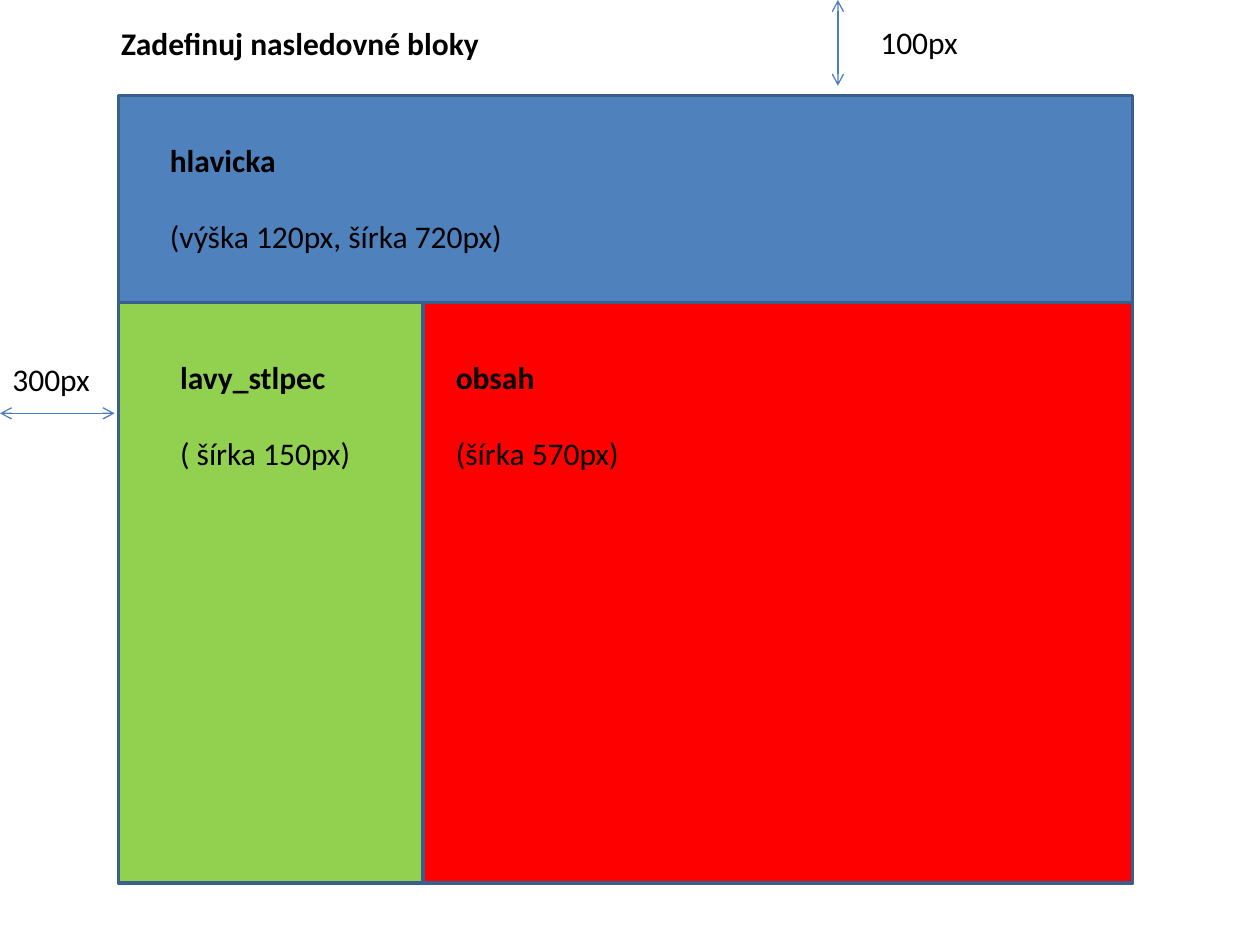
"""Build the slide that lists the page blocks to define, with their sizes."""
from lxml import etree
from pptx import Presentation
from pptx.dml.color import RGBColor
from pptx.enum import shapes, text
from pptx.oxml import ns
from pptx.util import Pt

COLORS = {"header": "4F81BD", "column": "92D050", "content": "FF0000",
          "border": "3A5F8C", "arrow": "4B7EBC", "text": "000000"}
LEFT, SPLIT, RIGHT = 67.7, 241.9, 647.3
TOP, MIDDLE, BOTTOM = 54.7, 172.8, 504.7


def rgb(name):
    return RGBColor.from_string(COLORS[name])


def add_block(s, color, left, top, right, bottom):
    sp = s.shapes.add_shape(shapes.MSO_SHAPE.RECTANGLE, Pt(left), Pt(top),
                            Pt(right - left), Pt(bottom - top))
    sp.shadow.inherit = False
    sp.fill.solid()
    sp.fill.fore_color.rgb = rgb(color)
    sp.line.color.rgb = rgb("border")
    sp.line.width = Pt(2)


def write_lines(sp, lines):
    tf = sp.text_frame
    tf.word_wrap = True
    tf.auto_size = text.MSO_AUTO_SIZE.SHAPE_TO_FIT_TEXT
    tf.vertical_anchor = text.MSO_ANCHOR.TOP
    for i, (line, bold) in enumerate(lines):
        p = tf.add_paragraph() if i else tf.paragraphs[0]
        p.alignment = text.PP_ALIGN.LEFT
        p.space_before = Pt(22 if i else 0)
        r = p.add_run()
        r.text = line
        r.font.name = "Calibri"
        r.font.size = Pt(18)
        r.font.bold = bold
        r.font.color.rgb = rgb("text")


def add_title(s, title, left, top, width, height):
    sp = s.shapes.title
    sp.left, sp.top, sp.width, sp.height = map(Pt, (left, top, width, height))
    write_lines(sp, [(title, True)])


def add_text(s, lines, left, top, width, height):
    sp = s.shapes.add_textbox(Pt(left), Pt(top), Pt(width), Pt(height))
    write_lines(sp, lines)


def add_block_text(s, name, size, left, top, width, height):
    add_text(s, [(name, True), (size, False)], left, top, width, height)


def add_arrow(s, x1, y1, x2, y2):
    c = s.shapes.add_connector(shapes.MSO_CONNECTOR.STRAIGHT,
                               Pt(x1), Pt(y1), Pt(x2), Pt(y2))
    c.line.color.rgb = rgb("arrow")
    c.line.width = Pt(0.75)
    ln = c.line._get_or_add_ln()
    for end in ("a:headEnd", "a:tailEnd"):
        etree.SubElement(ln, ns.qn(end), type="arrow")
    etree.SubElement(c._element.spPr, ns.qn("a:effectLst"))


def main():
    prs = Presentation()
    prs.slide_width, prs.slide_height = Pt(720), Pt(540)
    s = prs.slides.add_slide(prs.slide_layouts.get_by_name("Title Only"))

    add_block(s, "header", LEFT, TOP, RIGHT, MIDDLE)
    add_block(s, "column", LEFT, MIDDLE, SPLIT, BOTTOM)
    add_block(s, "content", SPLIT, MIDDLE, RIGHT, BOTTOM)

    add_block_text(s, "hlavicka", "(výška 120px, šírka 720px)", 90, 77, 540, 94)
    add_block_text(s, "lavy_stlpec", "( šírka 150px)", 95.8, 201, 118, 94)
    add_block_text(s, "obsah", "(šírka 570px)", 253.4, 201, 371.5, 73)

    add_title(s, "Zadefinuj nasledovné bloky", 62, 10, 692, 29)
    add_arrow(s, 478.8, 0, 478.8, 49)
    add_arrow(s, 0, 236.2, 65.5, 236.2)
    add_text(s, [("100px", False)], 496, 9.4, 96.5, 29)
    add_text(s, [("300px", False)], 0, 202.3, 65.5, 29)
    prs.save("out.pptx")


if __name__ == "__main__":
    main()
